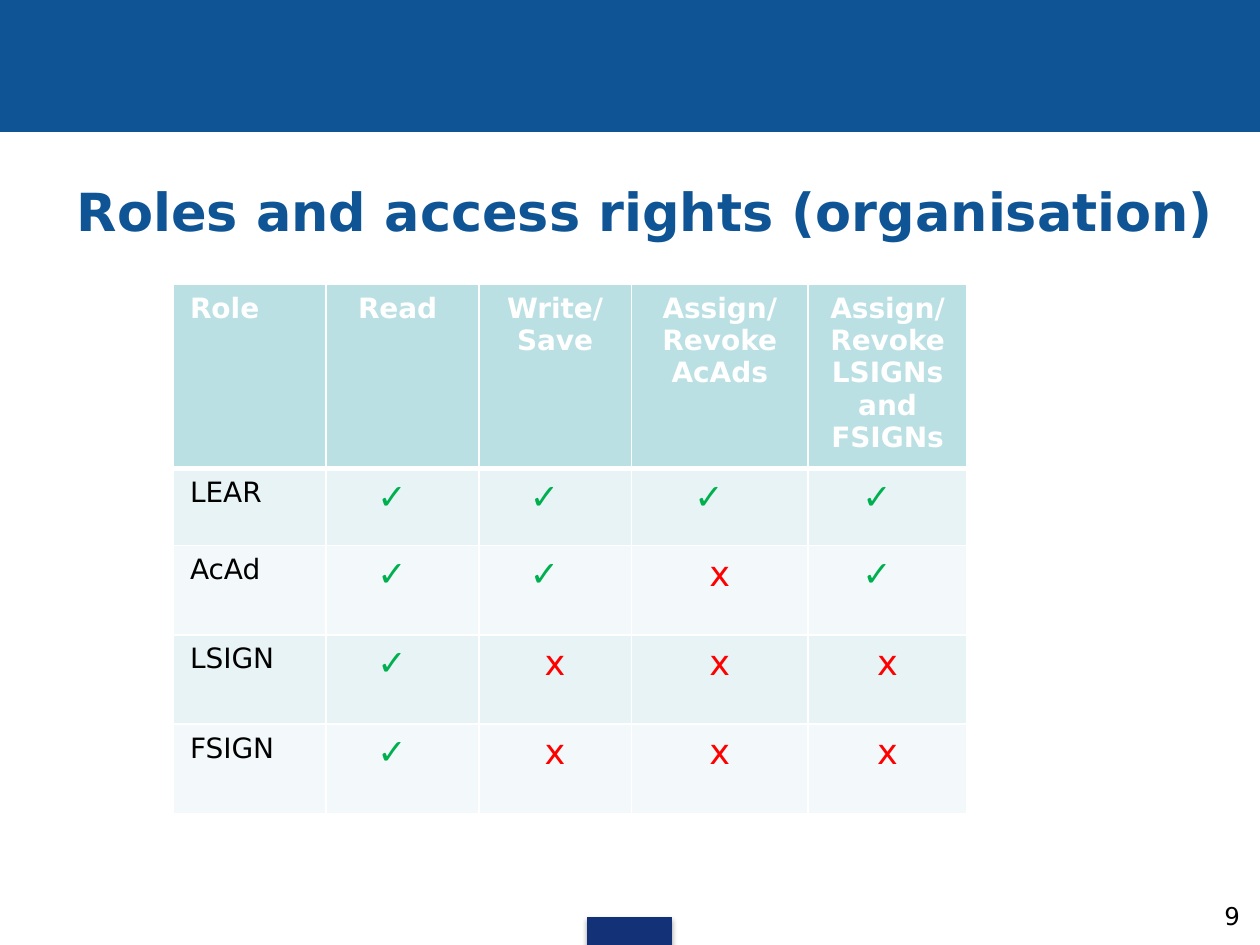
"""Build the slide on roles and access rights of an organisation."""
from lxml import etree
from pptx import Presentation
from pptx.dml.color import RGBColor
from pptx.enum.shapes import MSO_SHAPE
from pptx.enum.text import MSO_ANCHOR, PP_ALIGN
from pptx.oxml.ns import qn
from pptx.util import Pt

RECT = MSO_SHAPE.RECTANGLE
LEFT, MID, RIGHT = PP_ALIGN.LEFT, PP_ALIGN.CENTER, PP_ALIGN.RIGHT
TOP, BOTTOM = MSO_ANCHOR.TOP, MSO_ANCHOR.BOTTOM
FONT = "DejaVu Sans"
BLUE, NAVY, WHITE, BLACK = "0F5494", "133176", "FFFFFF", "000000"
GREEN, RED = "00B050", "FF0000"
HEAD, BANDS = "BBE0E3", ("E7F3F4", "F3F9FA")
TICK, HANG = "✓", 22.5

TITLE = "Roles and access rights (organisation)"
PAGE = "9"
ROWS = [
    ["Role", "Read ", "Write/Save", "Assign/Revoke AcAds", "Assign/Revoke LSIGNs and FSIGNs"],
    ["LEAR", TICK, TICK, TICK, TICK],
    ["AcAd", TICK, TICK, "x", TICK],
    ["LSIGN", TICK, "x", "x", "x"],
    ["FSIGN", TICK, "x", "x", "x"],
]
WIDTHS = [87.2, 87.2, 87.2, 101, 90.8]
HEIGHTS = [103.6, 44, 51, 51, 51]


def color(code):
    return RGBColor.from_string(code)


def add_bullet(para, mark, ink):
    props = para._p.get_or_add_pPr()
    props.set("marL", str(Pt(HANG)))
    props.set("indent", str(Pt(-HANG)))
    tint = etree.SubElement(props, qn("a:buClr"))
    etree.SubElement(tint, qn("a:srgbClr"), val=ink)
    etree.SubElement(props, qn("a:buFont"), typeface=FONT)
    etree.SubElement(props, qn("a:buChar"), char=mark)


def write(frame, text, size=16, ink=BLACK, bold=False, align=LEFT, space=None, bullet=None):
    para = frame.paragraphs[0]
    para.alignment = align
    if space:
        para.line_spacing = space
    if bullet:
        add_bullet(para, bullet, ink)
    run = para.add_run()
    run.text = text
    font = run.font
    font.name, font.size, font.bold = FONT, Pt(size), bold
    font.color.rgb = color(ink)


def inset(box, left, top, right, bottom):
    box.margin_left, box.margin_top = Pt(left), Pt(top)
    box.margin_right, box.margin_bottom = Pt(right), Pt(bottom)


def add_text(slide, place, text, pad, anchor=TOP, **style):
    frame = slide.shapes.add_textbox(*map(Pt, place)).text_frame
    frame.word_wrap = True
    frame.vertical_anchor = anchor
    inset(frame, *pad)
    write(frame, text, **style)


def add_bar(slide, place, fill):
    bar = slide.shapes.add_shape(RECT, *map(Pt, place))
    bar.shadow.inherit = False
    bar.fill.solid()
    bar.fill.fore_color.rgb = color(fill)
    bar.line.color.rgb = color(fill)
    bar.line.width = Pt(0.75)
    return bar


def add_shade(bar):
    effects = bar.fill._xPr.find(qn("a:effectLst"))
    shade = etree.SubElement(effects, qn("a:outerShdw"), blurRad=str(Pt(3.1)),
                             dist=str(Pt(1.8)), dir="5400000", rotWithShape="0")
    tint = etree.SubElement(shade, qn("a:srgbClr"), val=BLACK)
    etree.SubElement(tint, qn("a:alpha"), val="35000")


def add_edges(cell, row):
    props = cell._tc.get_or_add_tcPr()
    sizes = {"L": 1, "R": 1, "T": 3 if row == 1 else 1, "B": 3 if row == 0 else 1}
    for side, size in sizes.items():
        edge = etree.SubElement(props, qn("a:ln" + side), w=str(Pt(size)))
        fill = etree.SubElement(edge, qn("a:solidFill"))
        etree.SubElement(fill, qn("a:srgbClr"), val=WHITE)


def fill_cell(cell, text, row, col):
    add_edges(cell, row)
    cell.fill.solid()
    cell.fill.fore_color.rgb = color(BANDS[(row - 1) % 2] if row else HEAD)
    inset(cell, 9.4, 4.7, 9.4, 4.7)
    style = {"align": MID if col else LEFT}
    if row == 0:
        style.update(ink=WHITE, bold=True)
    elif text == TICK:
        text = " "
        style.update(ink=GREEN, size=20, bullet=TICK)
    elif col:
        style.update(ink=RED, size=20)
    write(cell.text_frame, text, **style)


def add_grid(slide, left, top):
    place = left, top, sum(WIDTHS), sum(HEIGHTS)
    grid = slide.shapes.add_table(len(ROWS), len(WIDTHS), *map(Pt, place)).table
    for col, width in zip(grid.columns, WIDTHS):
        col.width = Pt(width)
    for row, height in zip(grid.rows, HEIGHTS):
        row.height = Pt(height)
    for r, row in enumerate(ROWS):
        for c, text in enumerate(row):
            fill_cell(grid.cell(r, c), text, r, c)


def main():
    deck = Presentation()
    deck.slide_width, deck.slide_height = Pt(720), Pt(540)
    slide = deck.slides.add_slide(deck.slide_layouts[6])
    add_bar(slide, (0, 0, 720, 75.3), BLUE)
    add_shade(add_bar(slide, (335.7, 524.2, 48.2, 15.8), NAVY))
    add_text(slide, (8.6, 105.8, 702.8, 36), TITLE, (35.3, 3.6, 7.2, 3.6),
             size=30, ink=BLUE, bold=True, space=0.8)
    add_text(slide, (685.4, 514.8, 34.6, 25.2), PAGE, (0, 0, 11.5, 8.6),
             anchor=BOTTOM, size=14, align=RIGHT)
    add_grid(slide, 99.2, 162.4)
    deck.save("out.pptx")


if __name__ == "__main__":
    main()
